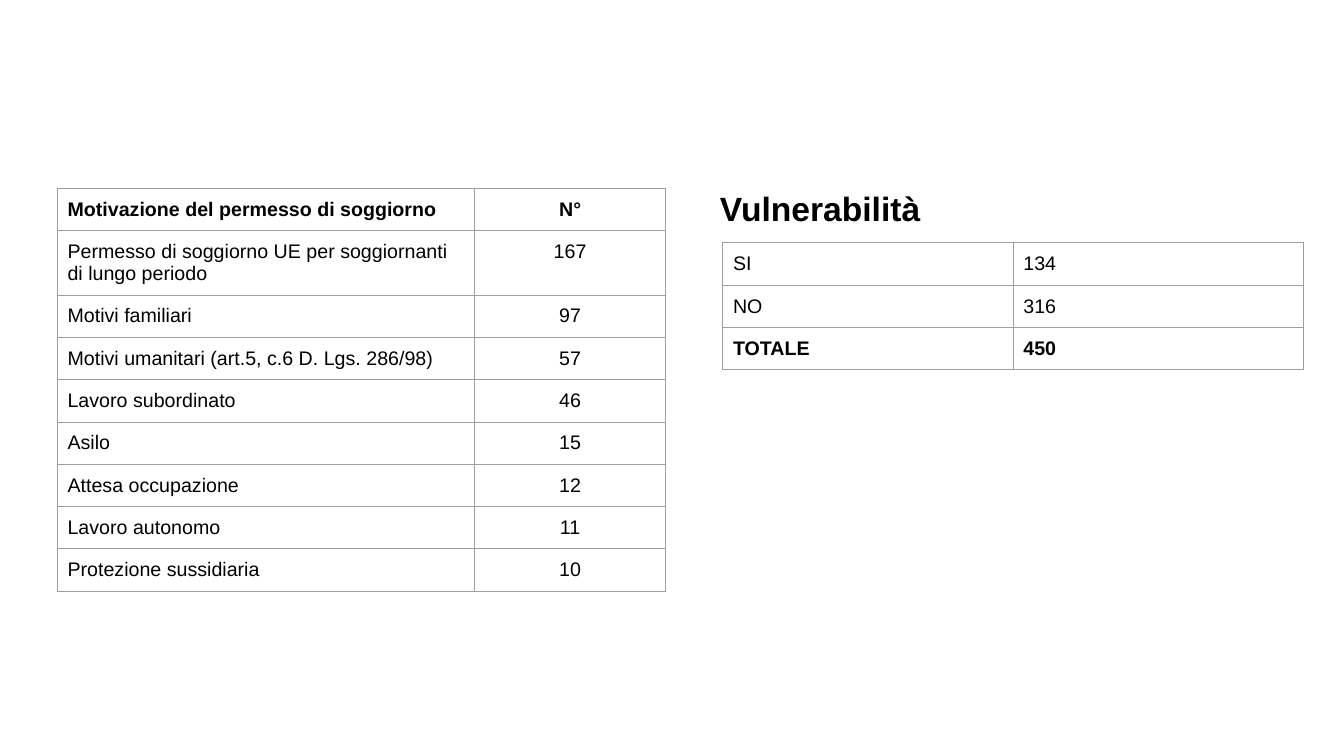
from lxml.etree import SubElement
from pptx import Presentation
from pptx.dml.color import RGBColor
from pptx.enum.text import MSO_ANCHOR, MSO_AUTO_SIZE, PP_ALIGN
from pptx.oxml.ns import qn
from pptx.util import Emu, Pt

EMU_PER_PX = 9144
FONT = "Arial"
TEXT = "000000"
BORDER = "9E9E9E"
PADDING = 10
ROW_HEIGHT = 42

PERMITS = [
    ("Motivazione del permesso di soggiorno", "N°"),
    ("Permesso di soggiorno UE per soggiornanti di lungo periodo", "167"),
    ("Motivi familiari", "97"),
    ("Motivi umanitari (art.5, c.6 D. Lgs. 286/98)", "57"),
    ("Lavoro subordinato", "46"),
    ("Asilo", "15"),
    ("Attesa occupazione", "12"),
    ("Lavoro autonomo", "11"),
    ("Protezione sussidiaria", "10"),
]
VULNERABILITY = [("SI", "134"), ("NO", "316"), ("TOTALE", "450")]


def px(n):
    return Emu(n * EMU_PER_PX)


def rgb(color):
    return RGBColor.from_string(color)


def format_text(tf, size, bold, align):
    p = tf.paragraphs[0]
    p.alignment = align
    for r in p.runs:
        r.font.name = FONT
        r.font.size = Pt(size)
        r.font.bold = bold
        r.font.color.rgb = rgb(TEXT)


def set_margins(box):
    box.margin_left = box.margin_right = px(PADDING)
    box.margin_top = box.margin_bottom = px(PADDING)


def add_borders(cell):
    tc_pr = cell._tc.get_or_add_tcPr()
    for side in ("lnL", "lnR", "lnT", "lnB"):
        ln = SubElement(tc_pr, qn(f"a:{side}"), w=str(Pt(0.75)))
        fill = SubElement(ln, qn("a:solidFill"))
        SubElement(fill, qn("a:srgbClr"), val=BORDER)


def add_data_table(s, left, top, widths, rows, bold_row, value_align):
    frame = s.shapes.add_table(len(rows), len(widths), px(left), px(top),
                               px(sum(widths)), px(ROW_HEIGHT * len(rows)))
    table = frame.table
    table.first_row = table.horz_banding = False
    for column, width in zip(table.columns, widths):
        column.width = px(width)
    for i, values in enumerate(rows):
        table.rows[i].height = px(ROW_HEIGHT)
        for j, (value, align) in enumerate(zip(values, (PP_ALIGN.LEFT, value_align))):
            cell = table.cell(i, j)
            cell.text_frame.text = value
            set_margins(cell)
            add_borders(cell)
            cell.fill.background()
            format_text(cell.text_frame, 14, i == bold_row, align)


def set_title(s, text, left, top, width, height):
    title = s.shapes.title
    title.left, title.top = px(left), px(top)
    title.width, title.height = px(width), px(height)
    tf = title.text_frame
    tf.text = text
    tf.word_wrap = True
    tf.auto_size = MSO_AUTO_SIZE.NONE
    tf.vertical_anchor = MSO_ANCHOR.TOP
    set_margins(tf)
    format_text(tf, 24, True, PP_ALIGN.LEFT)


def main():
    prs = Presentation()
    prs.slide_width, prs.slide_height = px(1333), px(750)
    s = prs.slides.add_slide(prs.slide_layouts[5])
    set_title(s, "Vulnerabilità", 704, 176, 219, 65)
    add_data_table(s, 717, 241, (288, 288), VULNERABILITY, 2, PP_ALIGN.LEFT)
    add_data_table(s, 57, 187, (414, 189), PERMITS, 0, PP_ALIGN.CENTER)
    prs.save("out.pptx")


if __name__ == "__main__":
    main()
